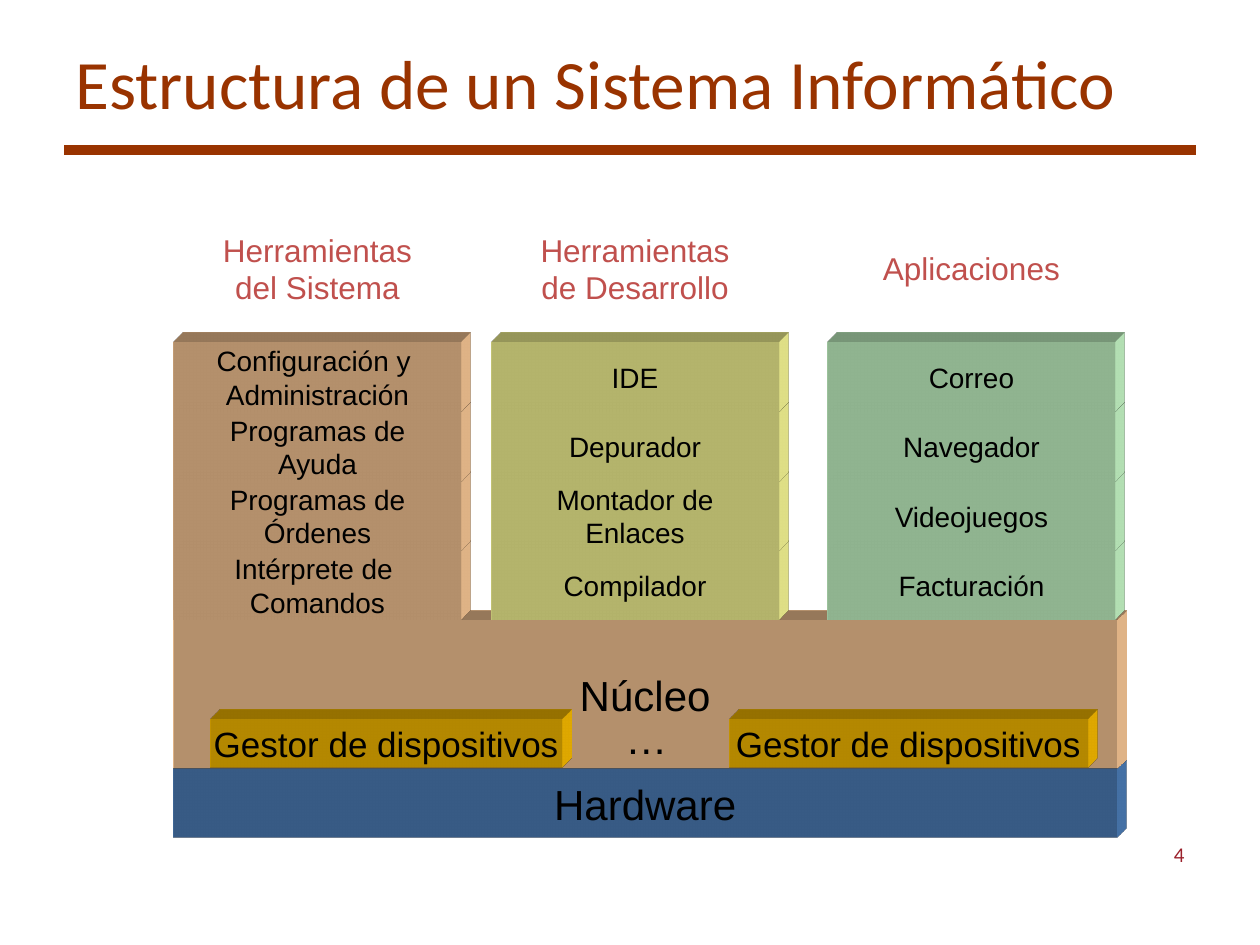
from lxml import etree
from pptx import Presentation
from pptx.dml.color import RGBColor
from pptx.enum.shapes import MSO_CONNECTOR, MSO_SHAPE
from pptx.enum.text import MSO_ANCHOR as Anchor, PP_ALIGN as Align
from pptx.oxml import parse_xml
from pptx.oxml.ns import nsdecls, qn
from pptx.util import Inches, Pt

HUES = {
    "rust": "993300", "wine": "9B212C", "red": "C0504D", "black": "000000",
    "blue": "4F81BD", "peach": "FFCC99", "yellow": "FFFF99",
    "mint": "CCFFCC", "gold": "FFC000",
}


def write(shape, text, size, hue, font="Arial", align=Align.CENTER, wrap=False):
    frame = shape.text_frame
    frame.text = text
    frame.word_wrap = wrap
    frame.vertical_anchor = Anchor.MIDDLE
    para = frame.paragraphs[0]
    para.alignment = align
    for run in para.runs:
        run.font.name = font
        run.font.size = Pt(size)
        run.font.color.rgb = RGBColor.from_string(HUES[hue])


def block(text, x, y, w, h, hue, size):
    """Add a labelled box with depth towards the top right."""
    box = slide.shapes.add_shape(
        MSO_SHAPE.RECTANGLE, Inches(x), Inches(y), Inches(w), Inches(h))
    box.shadow.inherit = False
    box.fill.solid()
    box.fill.fore_color.rgb = RGBColor.from_string(HUES[hue])
    box.line.fill.background()
    props = box._element.spPr
    props.append(parse_xml(
        f'<a:scene3d {nsdecls("a")}><a:camera prst="legacyObliqueTopRight"/>'
        '<a:lightRig rig="legacyFlat3" dir="b"/></a:scene3d>'))
    props.append(parse_xml(
        f'<a:sp3d {nsdecls("a")} extrusionH="201600" prstMaterial="legacyMatte">'
        '<a:bevelT w="13500" h="13500" prst="angle"/>'
        '<a:bevelB w="13500" h="13500" prst="angle"/>'
        f'<a:extrusionClr><a:srgbClr val="{HUES[hue]}"/></a:extrusionClr></a:sp3d>'))
    write(box, text, size, "black")


deck = Presentation()
deck.slide_width, deck.slide_height = Inches(10), Inches(7.5)
slide = deck.slides.add_slide(deck.slide_layouts[6])

# Title, rule and page number
rule = slide.shapes.add_connector(
    MSO_CONNECTOR.STRAIGHT, Inches(0.51), Inches(1.19), Inches(9.49), Inches(1.19))
rule.line.color.rgb = RGBColor.from_string(HUES["rust"])
rule.line.width = Pt(6)
etree.SubElement(rule._element.spPr, qn("a:effectLst"))

title = slide.shapes.add_textbox(Inches(0.5), Inches(0.3), Inches(9), Inches(0.69))
write(title, "Estructura de un Sistema Informático", 39.6, "rust",
      "Calibri", Align.LEFT, True)
page = slide.shapes.add_textbox(Inches(7.17), Inches(6.58), Inches(2.33), Inches(0.4))
write(page, "4", 12, "wine", "Calibri", Align.RIGHT, True)

# Base layers
left, top, wide, high = 1.38, 2.72, 2.28, 0.55
block("Hardware", left, 6.1, 7.48, high, "blue", 24)
block("Núcleo", left, 4.92, 7.48, 1.18, "peach", 24)

# Columns, each stacked from the bottom up
columns = [
    (left, "peach", "Herramientas\vdel Sistema", 1.78, 0.7,
     ["Configuración y \vAdministración", "Programas de\vAyuda",
      "Programas de\vÓrdenes", "Intérprete de \vComandos"]),
    (3.9, "yellow", "Herramientas\vde Desarrollo", 1.78, 0.7,
     ["IDE", "Depurador", "Montador de\vEnlaces", "Compilador"]),
    (6.57, "mint", "Aplicaciones", 1.93, 0.4,
     ["Correo", "Navegador", "Videojuegos", "Facturación"]),
]
for x, hue, head, y, tall, items in columns:
    for row in reversed(range(len(items))):
        block(items[row], x, top + row * high, wide, high, hue, 16)
    label = slide.shapes.add_textbox(
        Inches(x + 0.29), Inches(y), Inches(1.7), Inches(tall))
    write(label, head, 18, "red")

# Device managers
for x, w in [(1.67, 2.79), (5.79, 2.84)]:
    block("Gestor de dispositivos", x, 5.71, w, 0.38, "gold", 20)
dots = slide.shapes.add_textbox(Inches(4.86), Inches(5.6), Inches(0.54), Inches(0.51))
write(dots, "…", 24, "black")

deck.save("out.pptx")
